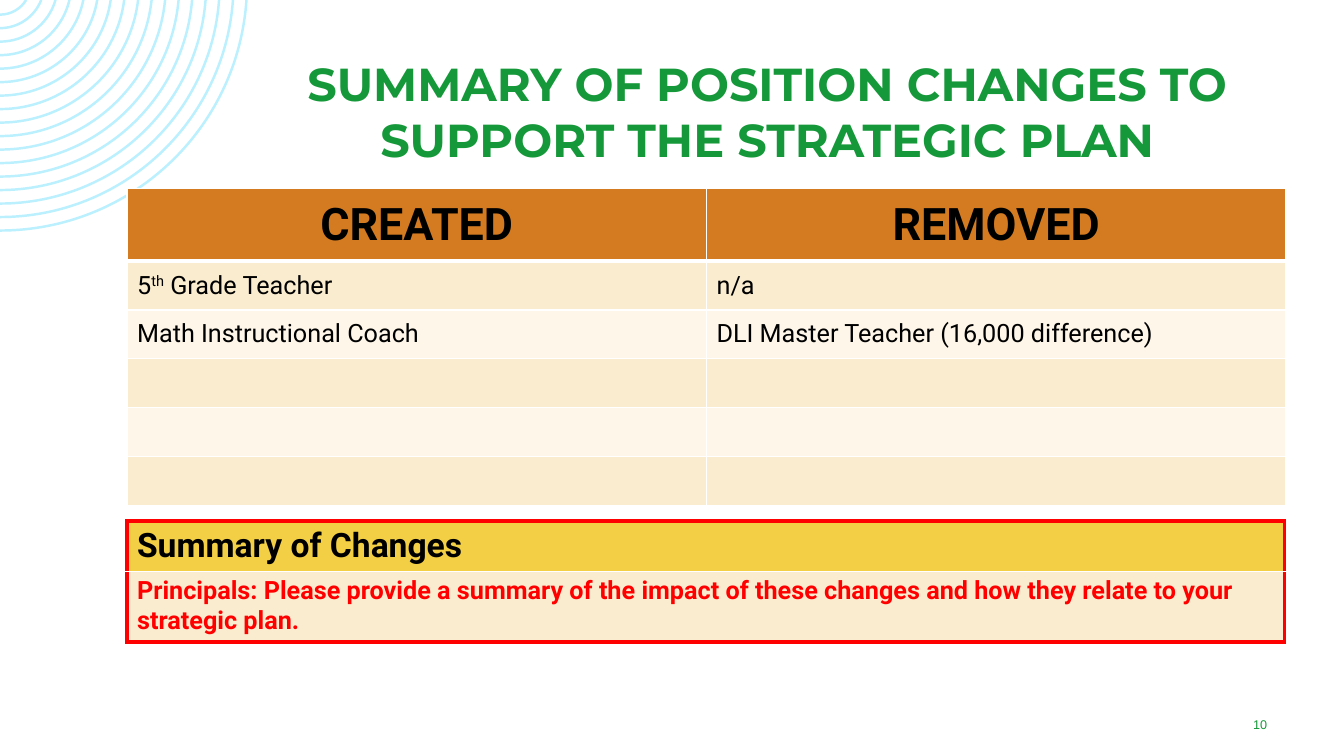
from math import asin, cos, pi, sin, tan
from lxml.etree import SubElement
from pptx import Presentation
from pptx.dml.color import RGBColor
from pptx.enum.text import MSO_ANCHOR as Anchor, MSO_AUTO_SIZE as Fit, PP_ALIGN as Align
from pptx.oxml.ns import qn
from pptx.util import Cm, Pt

GREEN = RGBColor(0x15, 0x98, 0x39)
SKY = RGBColor(0xBB, 0xF0, 0xFF)
ORANGE = RGBColor(0xD4, 0x7B, 0x22)
CREAM = RGBColor(0xFA, 0xED, 0xCF)
IVORY = RGBColor(0xFD, 0xF6, 0xE9)
GOLD = RGBColor(0xF3, 0xCF, 0x45)
BLACK = RGBColor(0, 0, 0)
WHITE = RGBColor(0xFF, 0xFF, 0xFF)
RED = RGBColor(0xFF, 0, 0)


def style(par, font, size, color, bold=False, align=Align.LEFT):
    par.alignment = align
    par.font.name = font
    par.font.size = Pt(size)
    par.font.bold = bold
    par.font.color.rgb = color


def paint(cell, fill, edges):
    props = cell._tc.get_or_add_tcPr()
    for side, (color, width) in zip("LRTB", edges):
        line = SubElement(props, qn(f"a:ln{side}"), w=str(Pt(width)))
        solid = SubElement(line, qn("a:solidFill"))
        SubElement(solid, qn("a:srgbClr"), val=str(color))
    cell.fill.solid()
    cell.fill.fore_color.rgb = fill


deck = Presentation()
deck.slide_width = Cm(33.86)
deck.slide_height = Cm(19.05)
slide = deck.slides.add_slide(deck.slide_layouts[5])
shapes = slide.shapes

drop = 41
radii = [78 + 34 * ring for ring in range(17)]
rings = shapes.build_freeform(0, 0, scale=Cm(0.01))
for rad in radii:
    start = asin(drop / rad)
    rings.move_to(rad * cos(start), 0)
    rings.add_line_segments([(0, rad - drop)], close=False)
waves = rings.convert_to_shape()
for rad, curve in zip(radii, list(waves._element.iter(qn("a:lnTo")))):
    start = asin(drop / rad)
    pull = rad * 4 / 3 * tan((pi / 2 - start) / 4)
    bends = [
        (rad * cos(start) - pull * sin(start), pull * cos(start)),
        (pull, rad - drop),
    ]
    end = curve[0]
    curve.tag = qn("a:cubicBezTo")
    for x, y in bends:
        SubElement(curve, qn("a:pt"), x=str(round(x)), y=str(round(y)))
    curve.append(end)
waves.shadow.inherit = False
waves.fill.background()
waves.line.color.rgb = SKY
waves.line.width = Pt(1.75)

title = shapes.title
title.left, title.top, title.width, title.height = Cm(6.25), Cm(1.27), Cm(26.16), Cm(3.73)
frame = title.text_frame
frame.text = "SUMMARY OF POSITION CHANGES TO SUPPORT THE STRATEGIC PLAN"
frame.word_wrap = True
frame.auto_size = Fit.NONE
frame.vertical_anchor = Anchor.TOP
style(frame.paragraphs[0], "Montserrat", 33, GREEN, True, Align.CENTER)

rows = [
    ("CREATED", "REMOVED"),
    ("5th Grade Teacher", "n/a"),
    ("Math Instructional Coach", "DLI Master Teacher (16,000 difference)"),
    ("", ""),
    ("", ""),
    ("", ""),
]
jobs = shapes.add_table(6, 2, Cm(3.2), Cm(4.75), Cm(29.2), Cm(7.98)).table
jobs.horz_banding = False
thin, thick = (WHITE, 1), (WHITE, 3)
for row, texts in enumerate(rows):
    head = row == 0
    jobs.rows[row].height = Cm(1.83 if head else 1.23)
    fill = ORANGE if head else CREAM if row % 2 else IVORY
    edges = [thin, thin, thick if row == 1 else thin, thick if head else thin]
    for col, text in enumerate(texts):
        cell = jobs.cell(row, col)
        paint(cell, fill, edges)
        cell.vertical_anchor = Anchor.MIDDLE
        par = cell.text_frame.paragraphs[0]
        first, mark, rest = text.partition("th Grade")
        if mark:
            for part in (first, "th", " Grade" + rest):
                run = par.add_run()
                run.text = part
                if part == "th":
                    run._r.get_or_add_rPr().set("baseline", "30000")
        elif text:
            par.add_run().text = text
        style(par, "Roboto", 32 if head else 18, BLACK, head, Align.CENTER if head else Align.LEFT)

page = shapes.add_textbox(Cm(30.38), Cm(17.88), Cm(2.74), Cm(0.76)).text_frame
page.text = "10"
page.word_wrap = True
page.vertical_anchor = Anchor.MIDDLE
style(page.paragraphs[0], "Arial", 9, GREEN, align=Align.CENTER)

ask = ("Principals: Please provide a summary of the impact of these changes "
       "and how they relate to your strategic plan.")
notes = [
    ("Summary of Changes", 24, BLACK, GOLD, (RED, 3), thin),
    (ask, 18, RED, CREAM, thin, (RED, 3)),
]
recap = shapes.add_table(2, 1, Cm(3.2), Cm(13.13), Cm(29.16), Cm(2.31)).table
recap.horz_banding = False
for row, (text, size, color, fill, top, base) in enumerate(notes):
    cell = recap.cell(row, 0)
    paint(cell, fill, [(RED, 3), (RED, 3), top, base])
    cell.text = text
    style(cell.text_frame.paragraphs[0], "Roboto", size, color, True)

deck.save("out.pptx")
